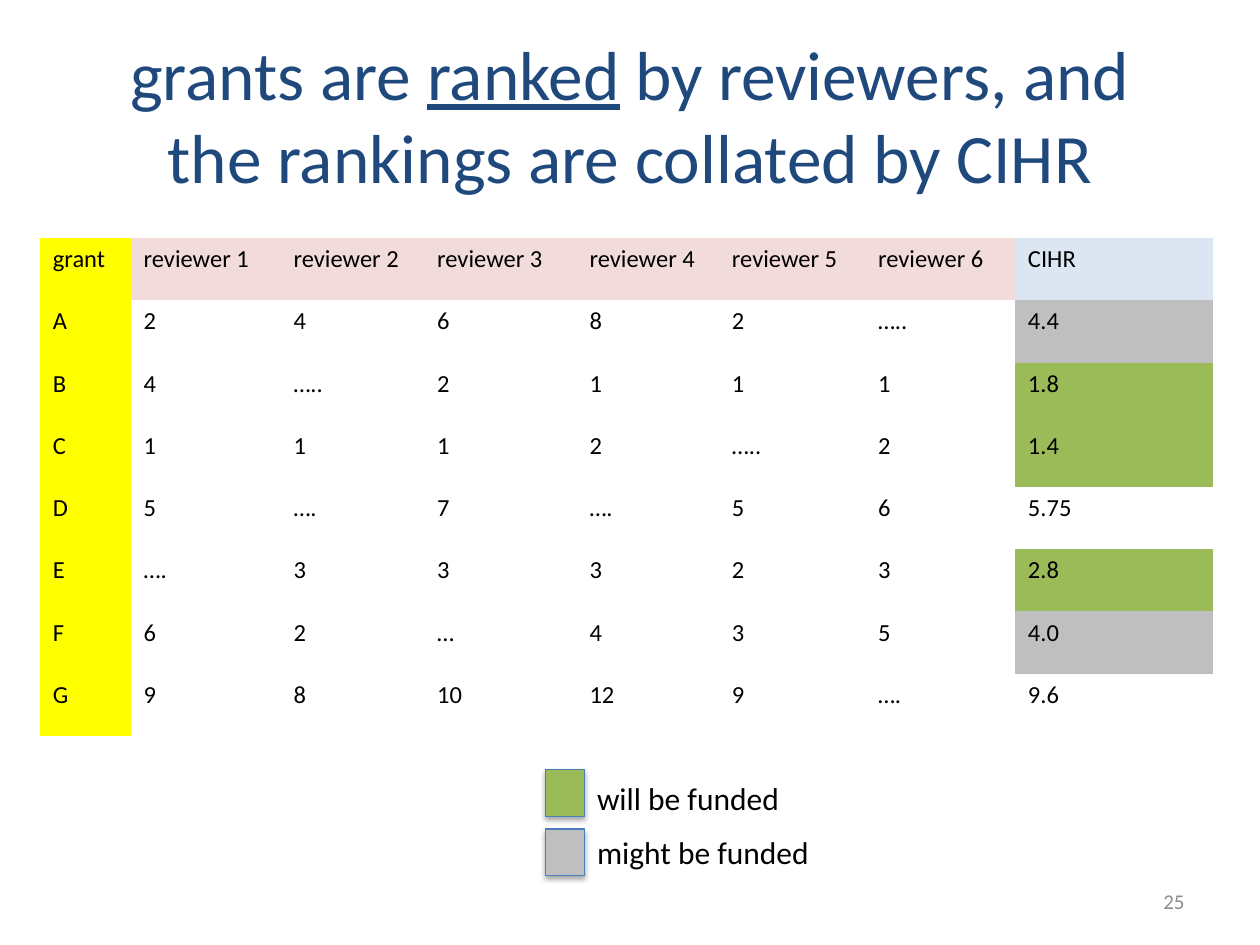
"""Build a slide with a table of grant rankings and a funding key."""
from lxml import etree
from pptx import Presentation
from pptx.dml.color import RGBColor
from pptx.enum import shapes, text
from pptx.oxml import ns
from pptx.util import Inches, Pt

YELLOW, PINK, BLUE = "FFFF00", "F2DCDB", "DCE6F2"
GREEN, GREY = "9BBB59", "BFBFBF"
NO_GRID = "{2D5ABB26-0587-4C30-8999-92F81FD0307C}"

WIDTHS = [0.72, 1.19, 1.14, 1.21, 1.13, 1.16, 1.19, 1.57]
HEAD = ["grant"] + [f"reviewer {n}" for n in range(1, 7)] + ["CIHR"]
RANKS = [
    ["A", "2", "4", "6", "8", "2", "…..", "4.4"],
    ["B", "4", "…..", "2", "1", "1", "1", "1.8"],
    ["C", "1", "1", "1", "2", "…..", "2", "1.4"],
    ["D", "5", "….", "7", "….", "5", "6", "5.75"],
    ["E", "….", "3", "3", "3", "2", "3", "2.8"],
    ["F", "6", "2", "…", "4", "3", "5", "4.0"],
    ["G", "9", "8", "10", "12", "9", "….", "9.6"],
]
STATUS = {"A": GREY, "B": GREEN, "C": GREEN, "E": GREEN, "F": GREY}


def color(code):
    return RGBColor.from_string(code)


def shade(row, col):
    if col == 0:
        return YELLOW
    if row == 0:
        return BLUE if col == len(HEAD) - 1 else PINK
    if col == len(HEAD) - 1:
        return STATUS.get(RANKS[row - 1][0])
    return None


class Deck:
    def __init__(self):
        self.font = "Calibri"
        self.prs = Presentation()
        self.prs.slide_width, self.prs.slide_height = Inches(10), Inches(7.5)
        self.slide = self.prs.slides.add_slide(self.prs.slide_layouts[5])

    def run(self, para, words, size, ink="000000", under=None):
        run = para.add_run()
        run.text = words
        run.font.name, run.font.size = self.font, Pt(size)
        run.font.color.rgb = color(ink)
        run.font.underline = under

    def title(self, box, parts):
        shape = self.slide.shapes.title
        shape.left, shape.top, shape.width, shape.height = map(Inches, box)
        frame = shape.text_frame
        frame.auto_size = text.MSO_AUTO_SIZE.NONE
        frame.vertical_anchor = text.MSO_ANCHOR.MIDDLE
        para = frame.paragraphs[0]
        para.alignment = text.PP_ALIGN.CENTER
        for words, under in parts:
            self.run(para, words, 39.6, "1F497D", under)

    def label(self, box, words, size, ink="000000", align=None, anchor=None, wrap=False):
        frame = self.slide.shapes.add_textbox(*map(Inches, box)).text_frame
        frame.word_wrap = wrap
        frame.vertical_anchor = anchor
        if not wrap:
            frame.auto_size = text.MSO_AUTO_SIZE.SHAPE_TO_FIT_TEXT
        para = frame.paragraphs[0]
        para.alignment = align
        self.run(para, words, size, ink)

    def table(self, box, rows, widths):
        grid = self.slide.shapes.add_table(len(rows), len(widths), *map(Inches, box)).table
        grid.first_row = grid.horz_banding = False
        grid._tbl.tblPr.find(ns.qn("a:tableStyleId")).text = NO_GRID
        for col, width in zip(grid.columns, widths):
            col.width = Inches(width)
        for r, row in enumerate(rows):
            for c, words in enumerate(row):
                cell = grid.cell(r, c)
                fill = shade(r, c)
                if fill:
                    cell.fill.solid()
                    cell.fill.fore_color.rgb = color(fill)
                else:
                    cell.fill.background()
                self.run(cell.text_frame.paragraphs[0], words, 14)

    def swatch(self, box, fill):
        shape = self.slide.shapes.add_shape(shapes.MSO_SHAPE.RECTANGLE, *map(Inches, box))
        shape.shadow.inherit = False
        shape.fill.solid()
        shape.fill.fore_color.rgb = color(fill)
        shape.line.color.rgb = color("4B7EBC")
        shape.line.width = Pt(0.75)
        effects = shape._element.spPr.find(ns.qn("a:effectLst"))
        cast = etree.SubElement(effects, ns.qn("a:outerShdw"), blurRad=str(Pt(3.1)),
                                dist=str(Pt(1.8)), dir="5400000", rotWithShape="0")
        tint = etree.SubElement(cast, ns.qn("a:srgbClr"), val="000000")
        etree.SubElement(tint, ns.qn("a:alpha"), val="35000")


def main():
    deck = Deck()
    deck.title((0.5, 0.28, 9, 1.25), [
        ("grants are ", None),
        ("ranked", True),
        (" by reviewers, and the rankings are collated by CIHR", None),
    ])
    deck.label((7.17, 6.95, 2.33, 0.4), "25", 12, "8C8C8C",
               text.PP_ALIGN.RIGHT, text.MSO_ANCHOR.MIDDLE, True)
    deck.table((0.32, 1.89, sum(WIDTHS), 3.95), [HEAD] + RANKS, WIDTHS)
    key = [("will be funded", GREEN, 6.11, 6.13, 1.66),
           ("might be funded", GREY, 6.58, 6.56, 1.9)]
    for words, fill, top, base, width in key:
        deck.swatch((4.33, top, 0.31, 0.37), fill)
        deck.label((4.64, base, width, 0.4), words, 18)
    deck.prs.save("out.pptx")


if __name__ == "__main__":
    main()
